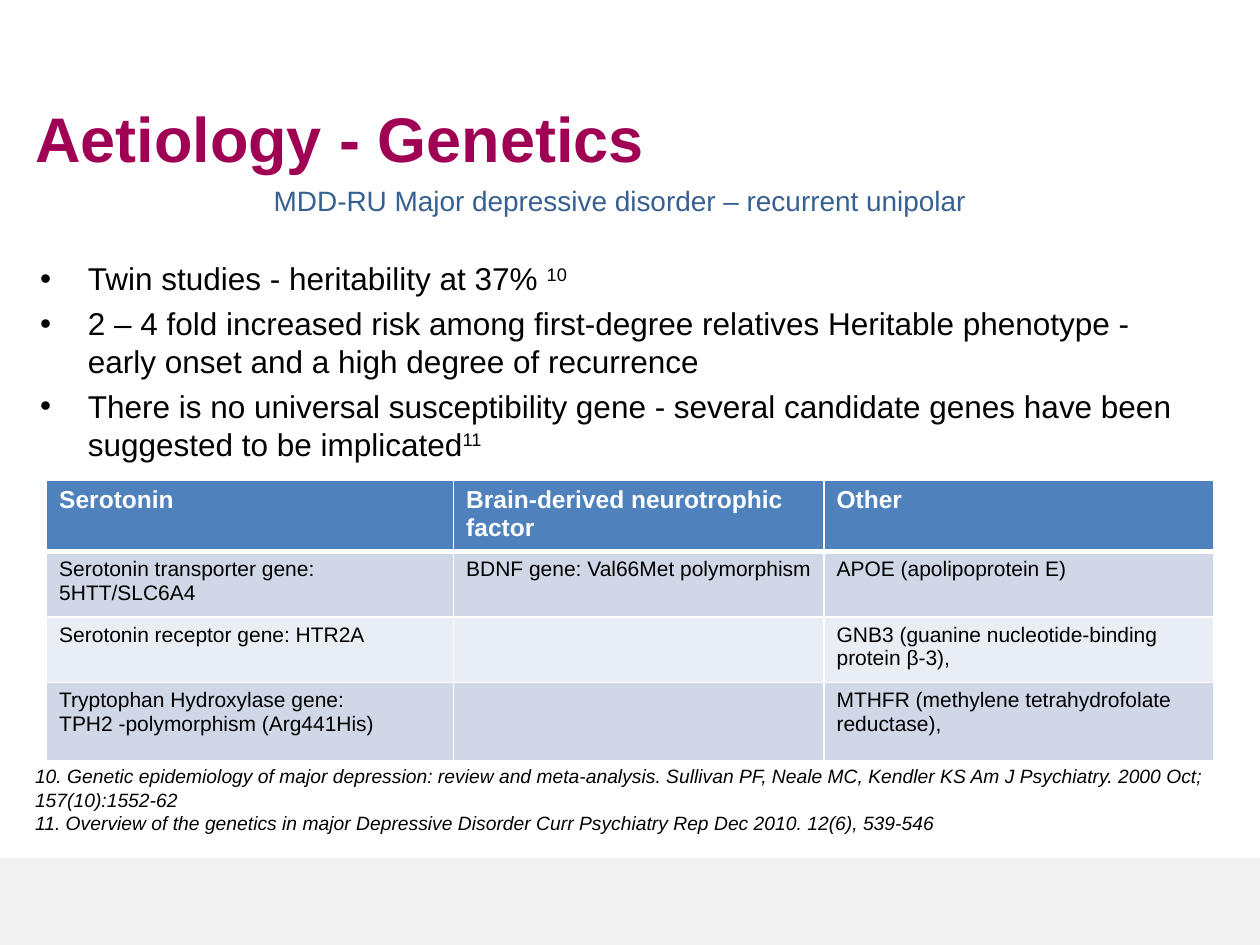
from pptx import Presentation
from pptx.dml.color import RGBColor
from pptx.enum.shapes import MSO_SHAPE
from pptx.enum.text import MSO_ANCHOR, MSO_AUTO_SIZE, PP_ALIGN
from pptx.oxml.ns import qn
from pptx.util import Inches, Pt
from lxml.etree import SubElement

COLORS = {
    "title": "A00054", "subtitle": "376092", "text": "000000",
    "white": "FFFFFF", "header": "4F81BD", "band_dark": "D0D8E8",
    "band_light": "E9EDF4", "footer": "F2F2F2",
}
FONT = "Arial"

SUBTITLE = "MDD-RU Major depressive disorder – recurrent unipolar"
# Each finding is a statement with its reference number
FINDINGS = [
    ("Twin studies - heritability at 37% ", "10"),
    ("2 – 4 fold increased risk among first-degree relatives Heritable "
     "phenotype - early onset and a high degree of recurrence", ""),
    ("There is no universal susceptibility gene - several candidate genes "
     "have been suggested to be implicated", "11"),
]
GENES = [
    ["Serotonin", "Brain-derived neurotrophic factor", "Other"],
    ["Serotonin transporter gene:\n5HTT/SLC6A4",
     "BDNF gene: Val66Met polymorphism", "APOE (apolipoprotein E)"],
    ["Serotonin receptor gene: HTR2A", "",
     "GNB3 (guanine nucleotide-binding protein β-3),"],
    ["Tryptophan Hydroxylase gene:\nTPH2 -polymorphism (Arg441His)", "",
     "MTHFR (methylene tetrahydrofolate reductase),"],
]
COLUMN_WIDTHS = [3.23, 2.94, 3.09]
ROW_HEIGHTS = [0.55, 0.52, 0.52, 0.62]
REFERENCES = [
    "10. Genetic epidemiology of major depression: review and meta-analysis. "
    "Sullivan PF, Neale MC, Kendler KS Am J Psychiatry. 2000 Oct; "
    "157(10):1552-62",
    "11. Overview of the genetics in major Depressive Disorder Curr "
    "Psychiatry Rep Dec 2010. 12(6), 539-546",
]


def color(name):
    return RGBColor.from_string(COLORS[name])


def style_font(font, size, color_name, bold=False, italic=False):
    font.name = FONT
    font.size = Pt(size)
    font.bold = bold
    font.italic = italic
    font.color.rgb = color(color_name)


def style_frame(frame, *style, **emphasis):
    for paragraph in frame.paragraphs:
        for run in paragraph.runs:
            style_font(run.font, *style, **emphasis)


def add_text_frame(slide, left, top, width, height):
    frame = slide.shapes.add_textbox(
        Inches(left), Inches(top), Inches(width), Inches(height)).text_frame
    frame.word_wrap = True
    return frame


def add_footer_band(slide, slide_width, slide_height):
    height = Inches(0.69)
    band = slide.shapes.add_shape(
        MSO_SHAPE.RECTANGLE, 0, slide_height - height, slide_width, height)
    band.shadow.inherit = False
    band.fill.solid()
    band.fill.fore_color.rgb = color("footer")
    band.line.fill.background()


def set_title(slide, text):
    title = slide.shapes.title
    title.left, title.top = Inches(0.18), Inches(0.66)
    title.width, title.height = Inches(9), Inches(0.86)
    frame = title.text_frame
    frame.text = text
    frame.auto_size = MSO_AUTO_SIZE.NONE
    frame.vertical_anchor = MSO_ANCHOR.MIDDLE
    frame.paragraphs[0].alignment = PP_ALIGN.LEFT
    style_frame(frame, 36, "title", bold=True)


def make_bullet(paragraph):
    properties = paragraph._p.get_or_add_pPr()
    indent = Inches(0.38)
    properties.set("marL", str(indent))
    properties.set("indent", str(-indent))
    SubElement(properties, qn("a:buFont"), typeface=FONT)
    SubElement(properties, qn("a:buChar"), char="•")


def add_findings(slide):
    frame = add_text_frame(slide, 0.22, 1.41, 9.4, 5.11)
    subtitle = frame.paragraphs[0]
    subtitle.text = SUBTITLE
    subtitle.alignment = PP_ALIGN.CENTER
    style_frame(frame, 16, "subtitle")

    for index, (statement, reference) in enumerate(FINDINGS):
        paragraph = frame.add_paragraph()
        make_bullet(paragraph)
        paragraph.space_before = Pt(4 if index else 24)
        statement_run = paragraph.add_run()
        statement_run.text = statement
        style_font(statement_run.font, 18, "text")
        if reference:
            reference_run = paragraph.add_run()
            reference_run.text = reference
            style_font(reference_run.font, 18, "text")
            reference_run.font._rPr.set("baseline", "30000")


def set_borders(cell, bottom_width):
    properties = cell._tc.get_or_add_tcPr()
    widths = {"a:lnL": 1, "a:lnR": 1, "a:lnT": 1, "a:lnB": bottom_width}
    for side, width in widths.items():
        border = SubElement(properties, qn(side), w=str(Pt(width)))
        fill = SubElement(border, qn("a:solidFill"))
        SubElement(fill, qn("a:srgbClr"), val=COLORS["white"])


def add_gene_table(slide):
    table = slide.shapes.add_table(
        len(GENES), len(COLUMN_WIDTHS), Inches(0.37), Inches(3.81),
        Inches(sum(COLUMN_WIDTHS)), Inches(sum(ROW_HEIGHTS))).table
    for column, width in zip(table.columns, COLUMN_WIDTHS):
        column.width = Inches(width)

    for row_index, (row, height) in enumerate(zip(table.rows, ROW_HEIGHTS)):
        row.height = Inches(height)
        is_header = row_index == 0
        band = "band_dark" if row_index % 2 else "band_light"
        for cell, text in zip(row.cells, GENES[row_index]):
            cell.text = text
            # Borders come before the fill in the cell properties
            set_borders(cell, 3 if is_header else 1)
            cell.fill.solid()
            cell.fill.fore_color.rgb = color("header" if is_header else band)
            style_frame(cell.text_frame, 14 if is_header else 12,
                        "white" if is_header else "text", bold=is_header)


def add_references(slide):
    frame = add_text_frame(slide, 0.18, 6.02, 9.73, 0.66)
    frame.text = "\n".join(REFERENCES)
    style_frame(frame, 11, "text", italic=True)


def main():
    deck = Presentation()
    deck.slide_width, deck.slide_height = Inches(10), Inches(7.5)
    slide = deck.slides.add_slide(deck.slide_layouts[5])
    add_footer_band(slide, deck.slide_width, deck.slide_height)
    set_title(slide, "Aetiology - Genetics")
    add_findings(slide)
    add_references(slide)
    add_gene_table(slide)
    deck.save("out.pptx")


if __name__ == "__main__":
    main()
